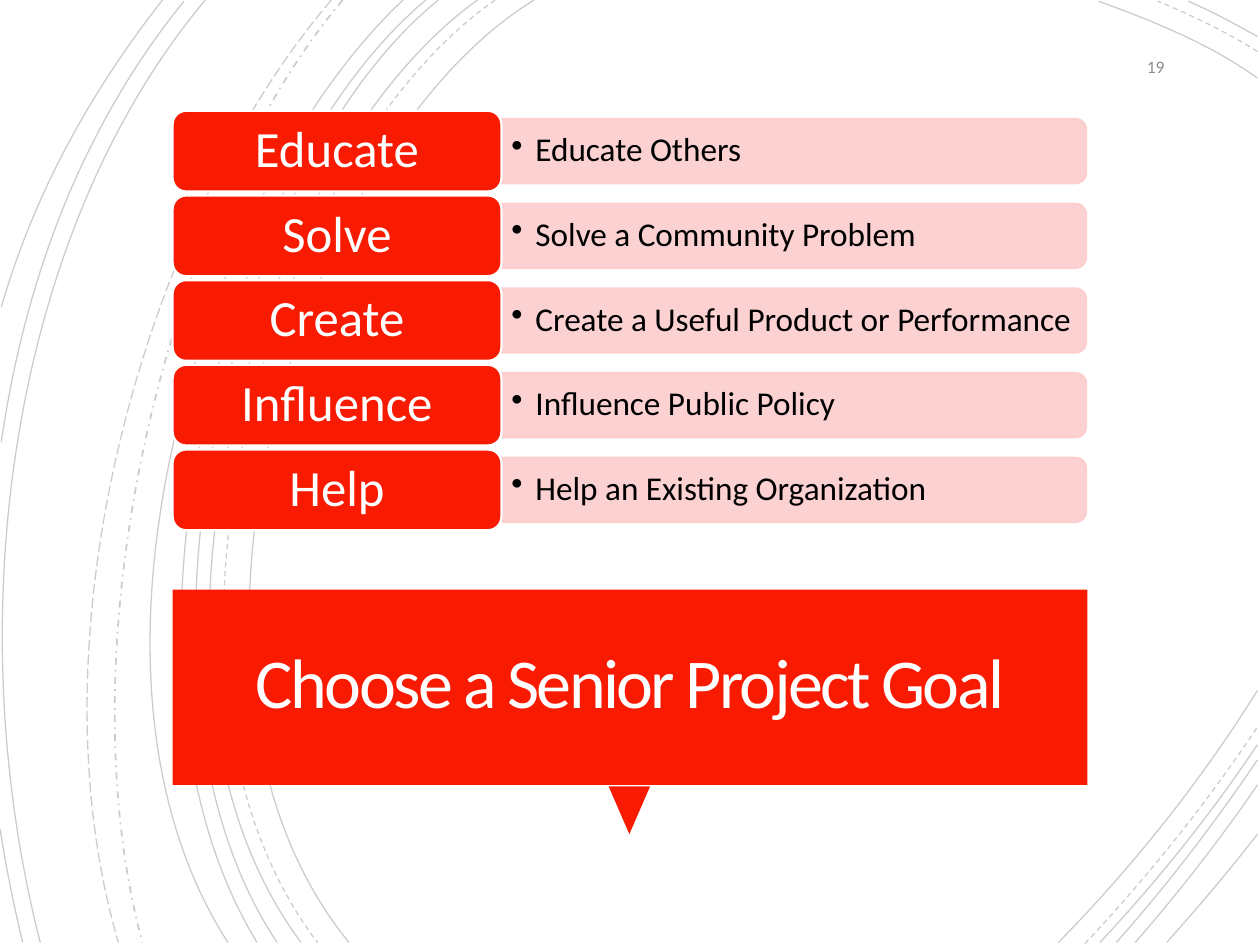
from dataclasses import dataclass

from lxml import etree
from pptx import Presentation
from pptx import util as u
from pptx.dml.color import RGBColor
from pptx.enum import dml, shapes, text
from pptx.oxml.ns import qn
from pptx.shapes.autoshape import Shape
from pptx.slide import Slide
from pptx.text.text import _Paragraph as Paragraph

RED = "F81B02"
PINK = "FCCDCC"
WHITE = "FFFFFF"
FONT = "Calibri"
ROW_TOP = 0.88
ROW_PITCH = 0.672
TAG_LEFT, TAG_WIDTH, TAG_HEIGHT = 1.37, 2.61, 0.64
BAR_LENGTH, BAR_HEIGHT = 4.64, 0.51
SOLID = dml.MSO_LINE.SOLID
DASH = dml.MSO_LINE.DASH


@dataclass
class Arc:
    points: tuple[tuple[float, float], ...]
    dash: dml.MSO_LINE = SOLID
    weight: float = 0.75


@dataclass
class Goal:
    tag: str
    detail: str


ARCS = [
    Arc(((4.24, 0), (2.36, 1.15), (1.07, 5.4), (2.77, 7.48))),
    Arc(((9.98, 0.62), (9.59, 0.34), (9.13, 0.16), (8.72, 0.01))),
    Arc(((8.4, 7.48), (8.97, 6.9), (9.52, 6.22), (9.98, 5.48))),
    Arc(((3.93, 0), (2.13, 1.25), (0.92, 5.37), (2.52, 7.48)), DASH),
    Arc(((9.98, 0.41), (9.73, 0.25), (9.45, 0.12), (9.19, 0.01)), DASH),
    Arc(((8.61, 7.49), (9.09, 6.98), (9.56, 6.4), (9.98, 5.77)), DASH),
    Arc(((3.79, 0), (2.02, 1.27), (0.82, 5.37), (2.39, 7.48))),
    Arc(((9.98, 0.29), (9.8, 0.19), (9.62, 0.09), (9.43, 0.01))),
    Arc(((8.73, 7.48), (9.17, 7.01), (9.6, 6.48), (9.98, 5.91))),
    Arc(((3.48, 0), (1.83, 1.33), (0.82, 5.41), (2.2, 7.48))),
    Arc(((8.86, 7.48), (9.25, 7.04), (9.63, 6.55), (9.98, 6.03))),
    Arc(((3.38, 0), (1.73, 1.38), (0.73, 5.33), (2.04, 7.48))),
    Arc(((9.01, 7.48), (9.35, 7.09), (9.68, 6.67), (9.98, 6.23))),
    Arc(((3.2, 0), (1.63, 1.47), (0.4, 5.29), (1.81, 7.48))),
    Arc(((9.26, 7.48), (9.5, 7.21), (9.75, 6.92), (9.98, 6.62))),
    Arc(((2.72, 0), (1.32, 1.66), (0.49, 5.09), (1.13, 7.48)), dml.MSO_LINE.DASH_DOT, 1),
    Arc(((2.63, 0), (1.18, 1.69), (0.21, 4.99), (0.94, 7.48)), dml.MSO_LINE.LONG_DASH),
    Arc(((1.63, 0), (0.08, 1.85), (-0.34, 4.9), (0.32, 7.48))),
    Arc(((1.46, 0.01), (0.69, 0.96), (0.21, 2.14), (0.01, 3.51))),
    Arc(((0, 6.58), (0.05, 6.89), (0.11, 7.19), (0.18, 7.48))),
    Arc(((1.29, 0), (0.75, 0.69), (0.28, 1.5), (0.01, 2.44))),
]

GOALS = [
    Goal("Educate", "Educate Others"),
    Goal("Solve", "Solve a Community Problem"),
    Goal("Create", "Create a Useful Product or Performance"),
    Goal("Influence", "Influence Public Policy"),
    Goal("Help", "Help an Existing Organization"),
]


def color(value: str) -> RGBColor:
    return RGBColor.from_string(value)


def set_alpha(shape: Shape, percent: int) -> None:
    for element in shape._element.spPr.iter(qn("a:srgbClr")):
        etree.SubElement(element, qn("a:alpha"), val=str(percent * 1000))


def add_arc(slide: Slide, arc: Arc) -> None:
    start, *rest = [(u.Inches(x), u.Inches(y)) for x, y in arc.points]
    builder = slide.shapes.build_freeform(*start)
    builder.add_line_segments(rest, close=False)
    shape = builder.convert_to_shape()
    outline = next(shape._element.iter(qn("a:path")))
    curve = etree.SubElement(outline, qn("a:cubicBezTo"))
    for segment in outline.findall(qn("a:lnTo")):
        curve.append(segment[0])
        outline.remove(segment)
    shape.shadow.inherit = False
    shape.fill.background()
    shape.line.color.rgb = color("000000")
    shape.line.width = u.Pt(arc.weight)
    shape.line.dash_style = arc.dash
    set_alpha(shape, 20)


def add_block(slide: Slide, kind: shapes.MSO_SHAPE, left: float, top: float,
              width: float, height: float, fill: str, line: str | None = None) -> Shape:
    shape = slide.shapes.add_shape(
        kind, u.Inches(left), u.Inches(top), u.Inches(width), u.Inches(height))
    shape.shadow.inherit = False
    shape.fill.solid()
    shape.fill.fore_color.rgb = color(fill)
    if line:
        shape.line.color.rgb = color(line)
        shape.line.width = u.Pt(1.25)
    else:
        shape.line.fill.background()
    return shape


def add_box(slide: Slide, left: float, top: float, width: float, height: float) -> Shape:
    return slide.shapes.add_textbox(
        u.Inches(left), u.Inches(top), u.Inches(width), u.Inches(height))


def write(shape: Shape, content: str, size: float, ink: str, align: text.PP_ALIGN,
          spacing: float = 0.9, inset: tuple[float, float] = (0.1, 0.05)) -> Paragraph:
    frame = shape.text_frame
    frame.word_wrap = True
    frame.vertical_anchor = text.MSO_ANCHOR.MIDDLE
    frame.margin_left = frame.margin_right = u.Inches(inset[0])
    frame.margin_top = frame.margin_bottom = u.Inches(inset[1])
    paragraph = frame.paragraphs[0]
    paragraph.text = content
    paragraph.alignment = align
    paragraph.line_spacing = spacing
    paragraph.font.name = FONT
    paragraph.font.size = u.Pt(size)
    paragraph.font.color.rgb = color(ink)
    return paragraph


def add_goal(slide: Slide, goal: Goal, top: float) -> None:
    bar_left = TAG_LEFT + TAG_WIDTH
    middle = top + TAG_HEIGHT / 2
    bar = add_block(slide, shapes.MSO_SHAPE.ROUND_2_SAME_RECTANGLE,
                    bar_left + (BAR_LENGTH - BAR_HEIGHT) / 2, middle - BAR_LENGTH / 2,
                    BAR_HEIGHT, BAR_LENGTH, PINK, PINK)
    bar.rotation = 90
    set_alpha(bar, 90)

    detail = add_box(slide, bar_left, middle - 0.23, BAR_LENGTH, 0.46)
    paragraph = write(detail, goal.detail, 19, "000000", text.PP_ALIGN.LEFT, inset=(0.08, 0.04))
    properties = paragraph._p.get_or_add_pPr()
    properties.set("marL", str(u.Inches(0.19)))
    properties.set("indent", str(-u.Inches(0.19)))
    bullet = etree.Element(qn("a:buChar"), char="•")
    properties.find(qn("a:lnSpc")).addnext(bullet)

    tag = add_block(slide, shapes.MSO_SHAPE.ROUNDED_RECTANGLE,
                    TAG_LEFT, top, TAG_WIDTH, TAG_HEIGHT, RED, WHITE)
    write(tag, goal.tag, 29, WHITE, text.PP_ALIGN.CENTER, inset=(0.12, 0.06))


def add_title(slide: Slide) -> None:
    pointer = add_block(slide, shapes.MSO_SHAPE.ISOSCELES_TRIANGLE, 4.83, 6.24, 0.33, 0.38, RED)
    pointer.rotation = 180
    banner = add_block(slide, shapes.MSO_SHAPE.RECTANGLE, 1.37, 4.68, 7.26, 1.55, RED)
    paragraph = write(banner, "Choose a Senior Project Goal", 40, "FFFEFF",
                      text.PP_ALIGN.CENTER, 0.85, (0.25, 0.25))
    paragraph.runs[0]._r.get_or_add_rPr().set("spc", "-150")


def main() -> None:
    presentation = Presentation()
    presentation.slide_width = u.Inches(10)
    presentation.slide_height = u.Inches(7.5)
    slide = presentation.slides.add_slide(presentation.slide_layouts[6])
    slide.background.fill.solid()
    slide.background.fill.fore_color.rgb = color(WHITE)

    for arc in ARCS:
        add_arc(slide, arc)
    add_title(slide)
    write(add_box(slide, 8.59, 0.35, 0.75, 0.35), "19", 10, "8C8C8C", text.PP_ALIGN.RIGHT, 1.0)
    for row, goal in enumerate(GOALS):
        add_goal(slide, goal, ROW_TOP + row * ROW_PITCH)

    presentation.save("out.pptx")


if __name__ == "__main__":
    main()
